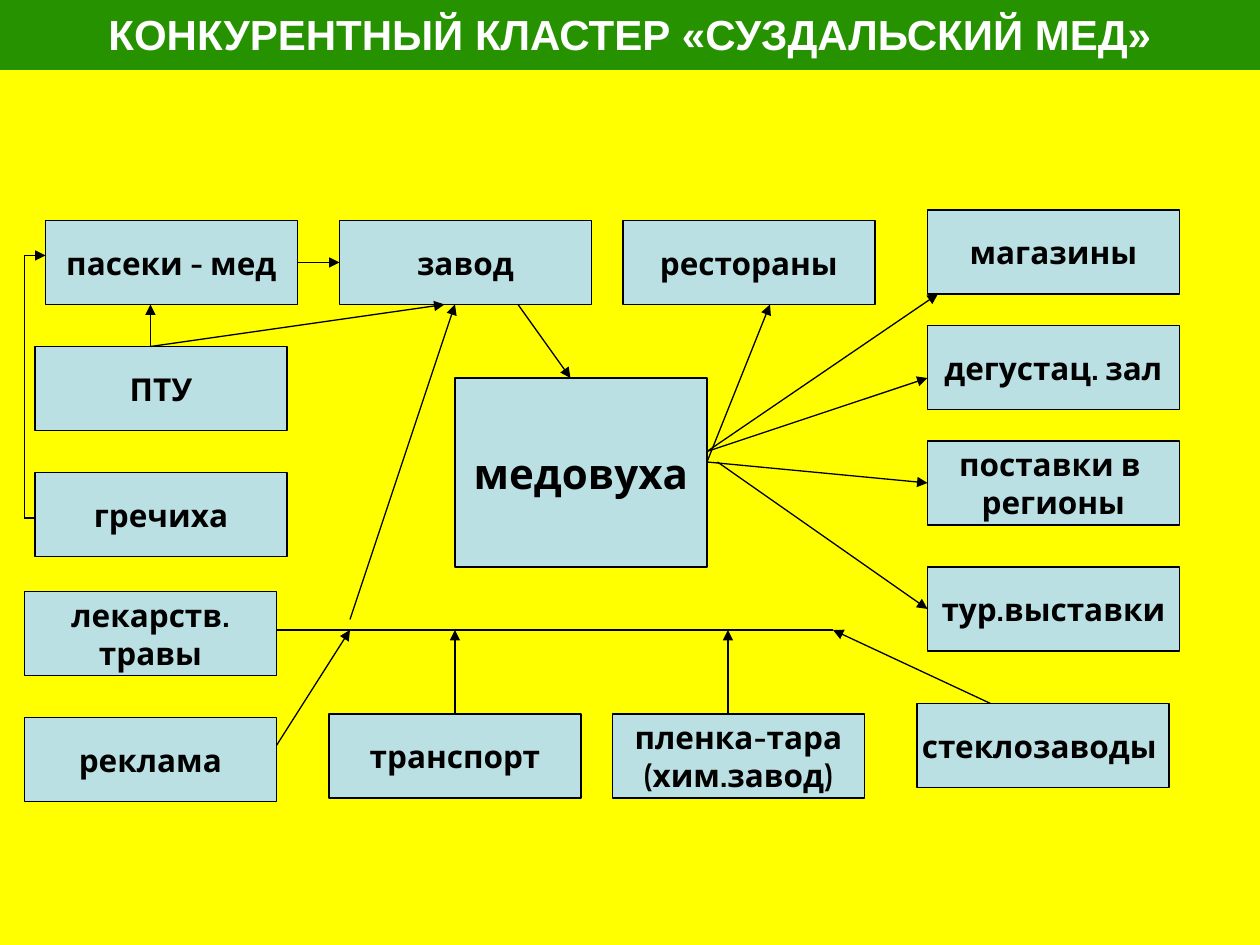
from lxml import etree
from pptx import Presentation
from pptx.dml.color import RGBColor
from pptx.enum import shapes as sh, text as tx
from pptx.oxml.ns import qn
from pptx.util import Pt

YELLOW = RGBColor(0xFF, 0xFF, 0x00)
GREEN = RGBColor(0x00, 0x80, 0x00)
BLUE = RGBColor(0xBB, 0xE0, 0xE3)
BLACK = RGBColor(0x00, 0x00, 0x00)
WHITE = RGBColor(0xFF, 0xFF, 0xFF)
WIDE, HIGH = 144, 48


def style(frame, size, font, color):
    """Centre the text of a frame and format its runs."""
    frame.vertical_anchor = tx.MSO_ANCHOR.MIDDLE
    for para in frame.paragraphs:
        para.alignment = tx.PP_ALIGN.CENTER
        for run in para.runs:
            run.font.size = Pt(size)
            run.font.name = font
            run.font.bold = True
            run.font.color.rgb = color


def node(slide, label, x, y, high=HIGH, size=18):
    """Add one labelled box of the cluster."""
    box = slide.shapes.add_shape(
        sh.MSO_SHAPE.RECTANGLE, Pt(x), Pt(y), Pt(WIDE), Pt(high))
    box.shadow.inherit = False
    box.fill.solid()
    box.fill.fore_color.rgb = BLUE
    box.line.color.rgb = BLACK
    box.line.width = Pt(0.75)
    box.text_frame.text = label
    box.text_frame.word_wrap = False
    style(box.text_frame, size, "Cabin", BLACK)
    return box


def link(slide, start, end, arrow=True):
    """Add a straight line between two points, with an arrowhead by default."""
    line = slide.shapes.add_connector(
        sh.MSO_CONNECTOR.STRAIGHT, *(Pt(v) for v in (*start, *end)))
    line.line.color.rgb = BLACK
    line.line.width = Pt(0.75)
    if arrow:
        tip = etree.SubElement(line.line._get_or_add_ln(), qn("a:tailEnd"))
        tip.set("type", "triangle")
    etree.SubElement(line._element.spPr, qn("a:effectLst"))
    return line


def banner(slide, x, y, wide, high):
    """Format the title as a translucent band."""
    title = slide.shapes.title
    title.left, title.top, title.width, title.height = map(
        Pt, (x, y, wide, high))
    title.fill.solid()
    title.fill.fore_color.rgb = GREEN
    tint = title._element.spPr.find(".//" + qn("a:srgbClr"))
    etree.SubElement(tint, qn("a:alpha")).set("val", "85000")
    frame = title.text_frame
    frame.text = "КОНКУРЕНТНЫЙ КЛАСТЕР «СУЗДАЛЬСКИЙ МЕД»"
    frame.auto_size = tx.MSO_AUTO_SIZE.NONE
    style(frame, 24, "Arial", WHITE)


def source(slide, x, y):
    """Place the honey sources and the plant they feed."""
    honey = node(slide, "пасеки - мед", x + 12, y)
    plant = node(slide, "завод", x + 180, y)
    node(slide, "ПТУ", x + 6, y + 72)
    node(slide, "гречиха", x + 6, y + 144)
    flow = link(slide, (x + 156, y + 24), (x + 180, y + 24))
    flow.begin_connect(honey, 3)
    flow.end_connect(plant, 1)
    for end in ((x + 72, y + HIGH), (x + 240, y + HIGH)):
        link(slide, (x + 72, y + 72), end)
    link(slide, (x, y + 20), (x, y + 170), False)
    link(slide, (x, y + 20), (x + 12, y + 20))
    link(slide, (x, y + 170), (x + 6, y + 170), False)


def core(slide, x, y):
    """Place the main product with the arrow from the plant."""
    node(slide, "медовуха", x, y, 108, 24)
    link(slide, (x + 36, y - 42), (x + 66, y))


def outlet(slide, x, y, hub):
    """Place the sales outlets with the arrows from the hub point."""
    shop = x + 174
    node(slide, "рестораны", x, y + 6)
    node(slide, "магазины", shop, y)
    node(slide, "дегустац. зал", shop, y + 66)
    region = node(slide, "поставки в \nрегионы", shop, y + 132)
    fair = node(slide, "тур.выставки", shop, y + 204)
    left, top = hub
    low = top + 6
    link(slide, (left, low), (x + 84, y + 54))
    link(slide, hub, (shop + 6, y + HIGH))
    link(slide, hub, (shop, y + 96))
    for box, start in ((region, left), (fair, left + 6)):
        flow = link(slide, (start, low), (shop, y + 156))
        flow.end_connect(box, 1)


def supply(slide, x, y):
    """Place the suppliers around their common line to the plant."""
    rail = y + 22
    node(slide, "лекарств.\nтравы", x, y)
    node(slide, "реклама", x, y + 72)
    cargo = node(slide, "транспорт", x + 174, y + 70)
    node(slide, "пленка-тара\n(хим.завод)", x + 336, y + 70)
    node(slide, "стеклозаводы ", x + 510, y + 64)
    link(slide, (x + WIDE, rail), (x + 462, rail), False)
    link(slide, (x + WIDE, y + 88), (x + 186, rail))
    flow = link(slide, (x + 246, y + 70), (x + 246, rail))
    flow.begin_connect(cargo, 0)
    link(slide, (x + 402, y + 70), (x + 402, rail))
    link(slide, (x + 552, y + 64), (x + 462, rail))
    link(slide, (x + 186, rail - 6), (x + 246, y - 164))


def main():
    """Build and save the slide."""
    deck = Presentation()
    deck.slide_width, deck.slide_height = Pt(720), Pt(540)
    slide = deck.slides.add_slide(deck.slide_layouts[5])
    slide.background.fill.solid()
    slide.background.fill.fore_color.rgb = YELLOW
    banner(slide, 0, -2, 720, 42)
    source(slide, 14, 126)
    core(slide, 260, 216)
    outlet(slide, 356, 120, (404, 258))
    supply(slide, 14, 338)
    deck.save("out.pptx")


if __name__ == "__main__":
    main()
